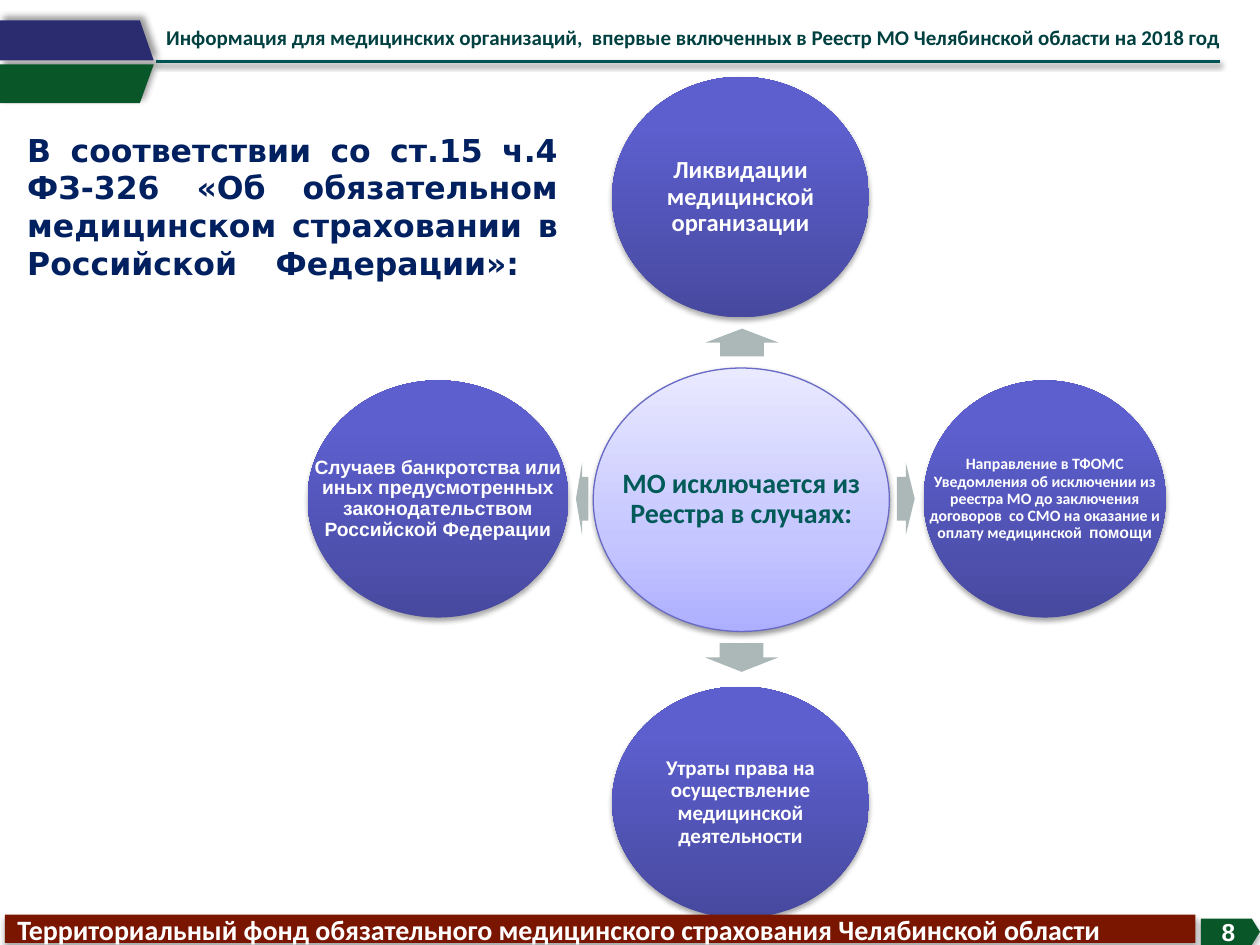
from lxml import etree
from pptx import Presentation
from pptx.dml.color import RGBColor
from pptx.enum.shapes import MSO_CONNECTOR, MSO_SHAPE
from pptx.enum.text import MSO_ANCHOR, PP_ALIGN
from pptx.oxml.ns import qn
from pptx.util import Cm, Pt

OVAL, ARROW = MSO_SHAPE.OVAL, MSO_SHAPE.RIGHT_ARROW
RECTANGLE, PENTAGON = MSO_SHAPE.RECTANGLE, MSO_SHAPE.PENTAGON
LEFT, CENTER, JUSTIFY = PP_ALIGN.LEFT, PP_ALIGN.CENTER, PP_ALIGN.JUSTIFY
TOP, MIDDLE = MSO_ANCHOR.TOP, MSO_ANCHOR.MIDDLE
color = RGBColor.from_string

CASE_STOPS = [(0, "47499F"), (80, "5D5FCE"), (100, "5B5DD1")]
CENTER_STOPS = [(0, "AEAFFF"), (35, "C5C6FF"), (100, "E9E9FF")]
# Shadows: opacity %, blur pt, distance pt, direction in degrees
CASE_SHADOW = (35, 3.1, 1.8, 90)
SOFT_SHADOW = (38, 3.1, 1.6, 90)
FLAG_SHADOW = (40, 4, 3, 315)
FOOTER_SHADOW = (32, 3.5, 2.2, 90)


def paint(shape, fill=None, shadow=None):
    """Fill with one colour or with gradient stops, and set the shadow."""
    properties = shape._element.spPr
    if fill:
        shape.line.fill.background()
    if isinstance(fill, str):
        shape.fill.solid()
        shape.fill.fore_color.rgb = color(fill)
    elif fill:
        shape.fill.gradient()
        shape.fill.gradient_angle = 90
        stops = properties.find(".//" + qn("a:gsLst"))
        stops.clear()
        for position, value in fill:
            stop = etree.SubElement(stops, qn("a:gs"), pos=str(position * 1000))
            etree.SubElement(stop, qn("a:srgbClr"), val=value)
    effects = etree.SubElement(properties, qn("a:effectLst"))
    if shadow:
        opacity, blur, distance, angle = shadow
        outer = etree.SubElement(
            effects, qn("a:outerShdw"), blurRad=str(Pt(blur)), dist=str(Pt(distance)),
            dir=str(angle * 60000), rotWithShape="0")
        black = etree.SubElement(outer, qn("a:srgbClr"), val="000000")
        etree.SubElement(black, qn("a:alpha"), val=str(opacity * 1000))


def write(box, text, size, font="Calibri", ink="FFFFFF", align=CENTER,
          anchor=MIDDLE, inset=None):
    """Put one bold paragraph in a box and return the paragraph."""
    frame = box.text_frame
    frame.text = text
    frame.word_wrap = True
    frame.vertical_anchor = anchor
    if inset is not None:
        frame.margin_left = frame.margin_right = Cm(inset)
        frame.margin_top = frame.margin_bottom = Cm(inset)
    para = frame.paragraphs[0]
    para.alignment = align
    for span in para.runs:
        span.font.size = Pt(size)
        span.font.name = font
        span.font.bold = True
        span.font.color.rgb = color(ink)
    return para


deck = Presentation()
deck.slide_width, deck.slide_height = Cm(25.4), Cm(19.05)
page = deck.slides.add_slide(deck.slide_layouts[6])
shapes = page.shapes

# Circles: frame, text, size, font, text colour, stops, shadow, inset
circles = [
    ((11.96, 7.42, 5.97, 5.31), "МО исключается из Реестра в случаях:",
     16, "Calibri", "005A58", CENTER_STOPS, SOFT_SHADOW, 0.05),
    ((12.34, 1.55, 5.18, 4.85), "Ликвидации медицинской организации",
     14, "Calibri", "FFFFFF", CASE_STOPS, CASE_SHADOW, 0.05),
    ((18.62, 7.67, 4.88, 4.78),
     "Направление в ТФОМС Уведомления об исключении из реестра МО до заключения "
     "договоров  со СМО на оказание и оплату медицинской  ",
     9, "Calibri", "FFFFFF", CASE_STOPS, CASE_SHADOW, 0.03),
    ((12.34, 13.84, 5.18, 4.67), "Утраты права на осуществление медицинской деятельности",
     12, "Calibri", "FFFFFF", CASE_STOPS, CASE_SHADOW, 0.05),
    ((6.2, 7.67, 5.26, 4.78),
     "Случаев банкротства или иных предусмотренных законодательством Российской Федерации",
     11, "Arial", "FFFFFF", CASE_STOPS, CASE_SHADOW, 0.05),
]
ovals, labels = [], []
for frame, text, size, font, ink, stops, shadow, inset in circles:
    oval = shapes.add_shape(OVAL, *map(Cm, frame))
    paint(oval, stops, shadow)
    box = shapes.add_textbox(*map(Cm, frame))
    para = write(box, text, size, font, ink, inset=inset)
    para.line_spacing = 0.9
    ovals.append(oval)
    labels.append(para)
ovals[0].line.color.rgb = color("686AC5")
ovals[0].line.width = Pt(0.75)

# Last word of the right circle in another font
span = labels[2].add_run()
span.text = "помощи"
span.font.size, span.font.name, span.font.bold = Pt(9), "Arial", True
span.font.color.rgb = color("FFFFFF")

# Arrows from the centre: left, top, length, rotation
for left, top, length, rotation in [
    (14.68, 6.17, 0.56, 270), (18.08, 9.32, 0.36, 0),
    (14.66, 12.52, 0.58, 90), (11.61, 9.32, 0.25, 180),
]:
    arrow = shapes.add_shape(ARROW, Cm(left), Cm(top), Cm(length), Cm(1.47))
    arrow.adjustments[0], arrow.adjustments[1] = 0.6, 0.5
    arrow.rotation = rotation
    paint(arrow, "ABB8B7")

# Corner flags: wide edge y, narrow edge y, colour
for wide, narrow, fill in [(1.3, 2.08, "095729"), (1.22, 0.41, "2B2C6F")]:
    builder = shapes.build_freeform(Cm(3.1), Cm(wide), scale=1.0)
    builder.add_line_segments(
        [(Cm(2.82), Cm(narrow)), (Cm(0), Cm(narrow)), (Cm(0), Cm(wide))], close=True)
    paint(builder.convert_to_shape(), fill, FLAG_SHADOW)

# Header rule and titles
rule = shapes.add_connector(MSO_CONNECTOR.STRAIGHT, Cm(3.15), Cm(1.24), Cm(24.59), Cm(1.24))
rule.line.color.rgb = color("005353")
rule.line.width = Pt(2)
paint(rule, shadow=SOFT_SHADOW)

header = shapes.add_textbox(Cm(3.1), Cm(0.38), Cm(22.3), Cm(1.55))
write(header, "Информация для медицинских организаций,  впервые включенных в Реестр МО "
      "Челябинской области на 2018 год", 12, ink="004040", align=LEFT, anchor=TOP)

# The closing line break keeps the last line justified
law = shapes.add_textbox(Cm(0.3), Cm(2.51), Cm(11.2), Cm(4.11))
write(law, "В соответствии со ст.15 ч.4 ФЗ-326 «Об обязательном медицинском страховании "
      "в Российской Федерации»: \v", 18, "DejaVu Sans", "002060", JUSTIFY, TOP)

# Footer and page number
footer = shapes.add_shape(RECTANGLE, Cm(0.1), Cm(18.44), Cm(24), Cm(0.57))
paint(footer, "7A1600", FOOTER_SHADOW)
write(footer, "Территориальный фонд обязательного медицинского страхования Челябинской области",
      16, align=LEFT)

number = shapes.add_shape(PENTAGON, Cm(24.21), Cm(18.52), Cm(1.19), Cm(0.53))
number.adjustments[0] = 0.31
paint(number, "095729", FOOTER_SHADOW)
write(number, "8", 14, "Arial")

deck.save("out.pptx")
